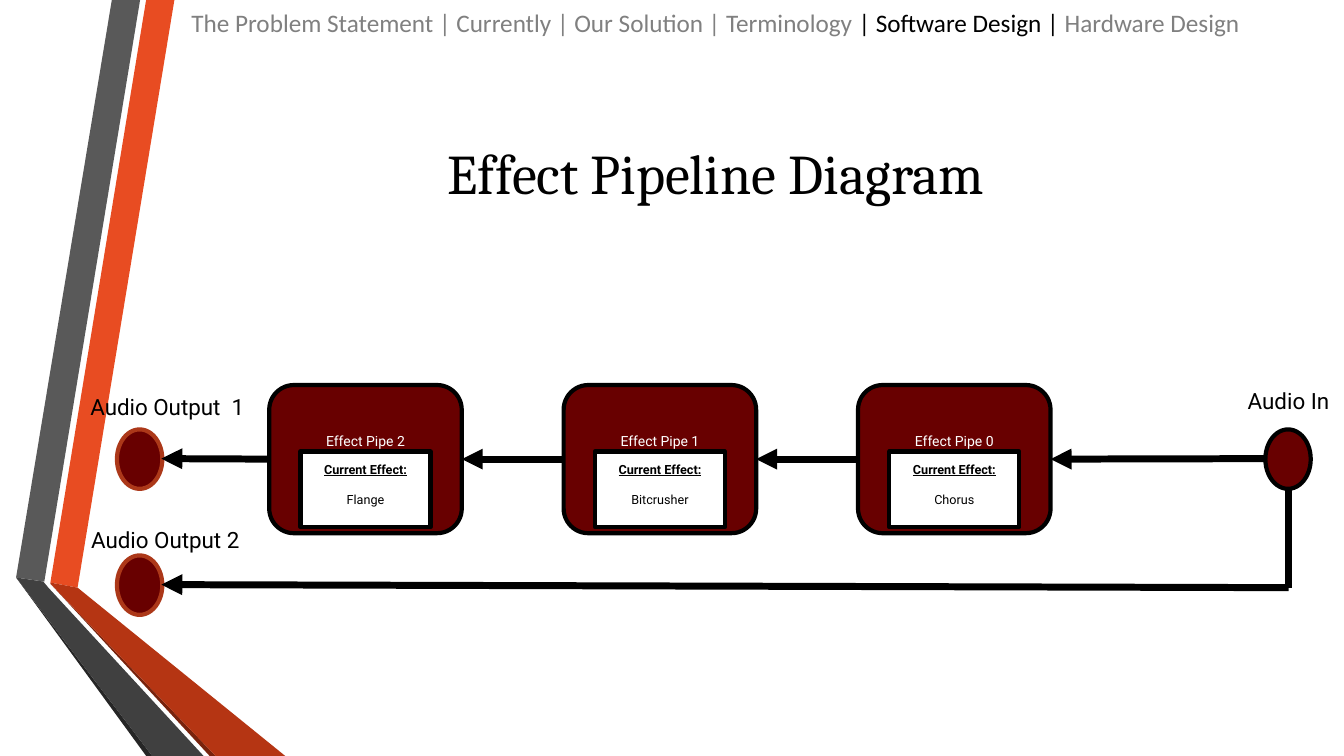
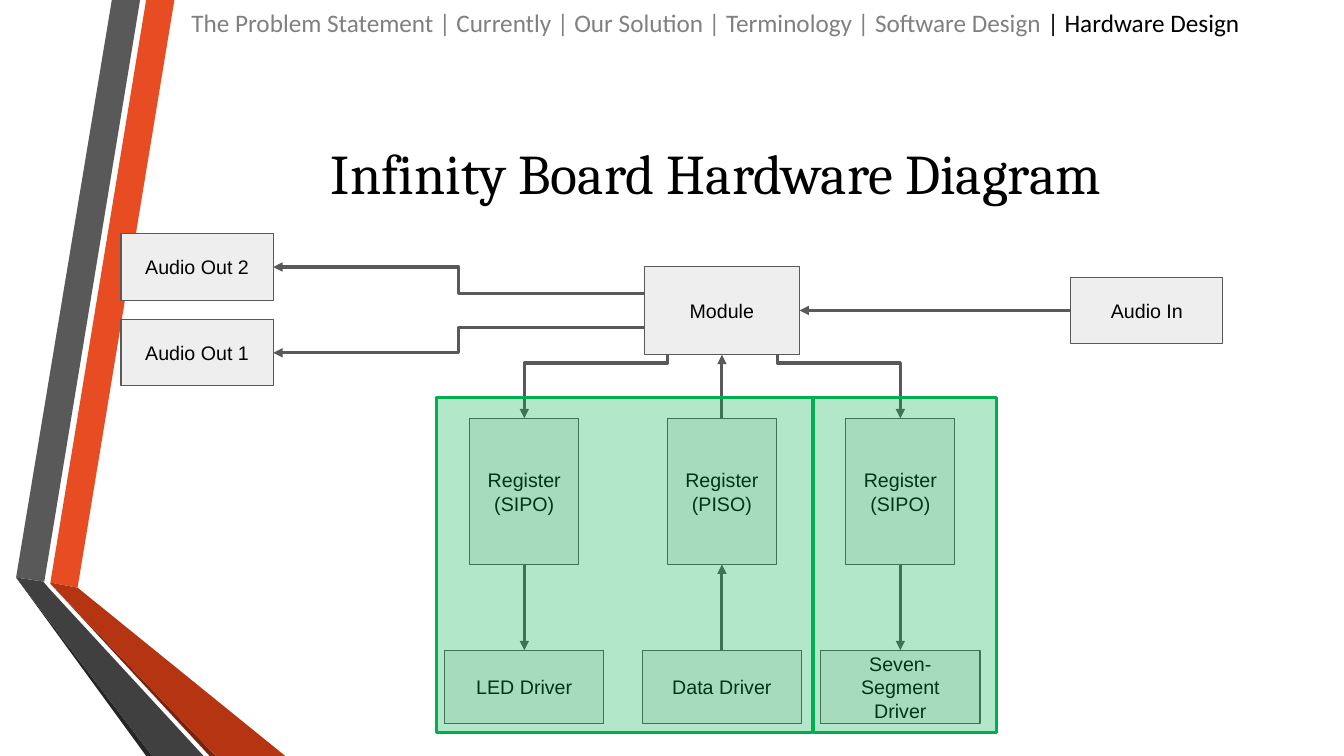
"""Two diagram slides: an effect pipeline and the hardware board."""
from dataclasses import dataclass

from lxml import etree
from pptx import Presentation
from pptx import util as u
from pptx.dml.color import RGBColor
from pptx.enum import shapes, text
from pptx.oxml.ns import qn

SHAPE = shapes.MSO_SHAPE
LINK = shapes.MSO_CONNECTOR
ANCHOR = text.MSO_ANCHOR
CENTER = text.PP_ALIGN.CENTER
TOP, LEFT, BOTTOM, RIGHT = range(4)


@dataclass(frozen=True)
class Theme:
    """Colours and text styles shared by the slides."""
    black: str = "000000"
    white: str = "FFFFFF"
    muted: str = "808080"
    maroon: str = "680000"
    rust: str = "AC3819"
    box: str = "EEEEEE"
    wire: str = "595959"
    zone: str = "00B050"
    title: tuple = ("Cambria", 40)
    trail: tuple = ("Calibri", 18)
    label: tuple = ("Roboto", 16)
    pipe: tuple = ("Roboto", 10)
    effect: tuple = ("Roboto", 9)
    block: tuple = ("Arial", 14)


T = Theme()
SECTIONS = ["The Problem Statement", "Currently", "Our Solution", "Terminology",
            "Software Design", "Hardware Design"]
BANDS = [
    ("E84C22", [(0.5, 5.78), (0.77, 5.83), (1.73, 0), (1.45, 0)]),
    ("595959", [(1.39, 0), (1.11, 0), (0.16, 5.73), (0.44, 5.77)]),
    ("262626", [(0.16, 5.73), (1.45, 7.5), (1.51, 7.5)]),
    ("78230D", [(0.5, 5.79), (2.08, 7.5), (2.14, 7.5)]),
    ("B53513", [(0.5, 5.79), (2.14, 7.5), (2.83, 7.5), (0.77, 5.83), (0.5, 5.78)]),
    ("404040", [(2.02, 7.5), (0.48, 5.83), (0.43, 5.77), (0.16, 5.73), (1.51, 7.5)]),
]


def rgb(code):
    """Turn a hex code into a colour."""
    return RGBColor.from_string(code)


def inches(*values):
    """Turn numbers into lengths."""
    return [u.Inches(v) for v in values]


def assign(obj, values):
    """Set each named attribute on an object."""
    for name, value in values.items():
        setattr(obj, name, value)


def add_run(p, words, style, color, **extra):
    """Add a formatted run to a paragraph."""
    r = p.add_run()
    r.text = words
    assign(r.font, {"name": style[0], "size": u.Pt(style[1]), **extra})
    r.font.color.rgb = rgb(color)


def write(tf, lines, style, color, **frame):
    """Fill a text frame with centred lines."""
    assign(tf, {"word_wrap": True, **frame})
    for i, line in enumerate(lines):
        p = tf.add_paragraph() if i else tf.paragraphs[0]
        p.alignment = CENTER
        add_run(p, line, style, color)


def paint(sp, fill, line=None, width=0):
    """Give a shape a flat fill and an outline."""
    sp.shadow.inherit = False
    sp.fill.solid()
    sp.fill.fore_color.rgb = rgb(fill)
    if line:
        sp.line.color.rgb = rgb(line)
        sp.line.width = u.Pt(width)
    else:
        sp.line.fill.background()


def add_shape(s, kind, at, fill, line, width):
    """Add a painted preset shape."""
    sp = s.shapes.add_shape(kind, *inches(*at))
    paint(sp, fill, line, width)
    return sp


def add_label(s, words, at):
    """Add a centred caption."""
    tf = s.shapes.add_textbox(*inches(*at)).text_frame
    write(tf, [words], T.label, T.black)


def add_line(s, start, end, color, width, arrow=True, kind=LINK.STRAIGHT):
    """Add a connector, with an arrowhead at its end by default."""
    c = s.shapes.add_connector(kind, *inches(*start, *end))
    c.line.color.rgb = rgb(color)
    c.line.width = u.Pt(width)
    if arrow:
        etree.SubElement(c.line._get_or_add_ln(), qn("a:tailEnd"), type="triangle")
    etree.SubElement(c.element.spPr, qn("a:effectLst"))
    return c


def add_wire(s, start, start_side, end, end_side):
    """Join the sides of two blocks with a straight arrow."""
    c = add_line(s, (0, 0), (1, 1), T.wire, 2.25)
    c.begin_connect(start, start_side)
    c.end_connect(end, end_side)


def add_drop(s, start, end, bend):
    """Add an elbow arrow that leaves downwards and turns at a share of its height."""
    (x1, y1), (x2, y2) = start, end
    cx, cy = (x1 + x2) / 2, (y1 + y2) / 2
    dx, dy = (x2 - x1) / 2, (y2 - y1) / 2
    c = add_line(s, (cx - dy, cy + dx), (cx + dy, cy - dx), T.wire, 2.25, kind=LINK.ELBOW)
    spPr = c.element.spPr
    spPr.find(qn("a:xfrm")).set("rot", str(90 * 60000))
    geom = spPr.find(qn("a:prstGeom"))
    guides = geom.find(qn("a:avLst"))
    if guides is None:
        guides = etree.SubElement(geom, qn("a:avLst"))
    etree.SubElement(guides, qn("a:gd"), name="adj1", fmla=f"val {round(bend * 100000)}")


def add_bands(prs, s):
    """Draw the side bands and hand them to the slide master."""
    for i, (color, points) in enumerate(BANDS):
        first, *rest = [inches(*point) for point in points]
        builder = s.shapes.build_freeform(*first)
        builder.add_line_segments(rest, close=True)
        sp = builder.convert_to_shape()
        paint(sp, color)
        sp.element.nvSpPr.cNvPr.set("id", str(20 + i))
        prs.slide_master.shapes.element.insert(2 + i, sp.element)


def add_slide(prs, title, current):
    """Add a slide with its title and the section trail."""
    s = prs.slides.add_slide(prs.slide_layouts[5])
    sp = s.shapes.title
    assign(sp, dict(zip(("left", "top", "width", "height"), inches(1.62, 0.75, 10.96, 1.92))))
    write(sp.text_frame, [title], T.title, T.black, vertical_anchor=ANCHOR.MIDDLE,
          auto_size=text.MSO_AUTO_SIZE.NONE)
    tf = s.shapes.add_textbox(*inches(1.8, 0.02, 11.81, 0.4)).text_frame
    tf.word_wrap = True
    p = tf.paragraphs[0]
    i = SECTIONS.index(current)
    after = " | ".join(SECTIONS[i + 1:])
    add_run(p, " | ".join(SECTIONS[:i]) + " ", T.trail, T.muted)
    add_run(p, f"| {current}" + (" | " if after else ""), T.trail, T.black)
    if after:
        add_run(p, after, T.trail, T.muted)
    return s


def add_pipe(s, left, name, effect):
    """Add an effect pipe holding its current effect."""
    pipe = add_shape(s, SHAPE.ROUNDED_RECTANGLE, (left, 3.82, 1.91, 1.47), T.maroon, T.black, 3)
    write(pipe.text_frame, [name], T.pipe, T.white, vertical_anchor=ANCHOR.TOP,
          margin_top=u.Inches(0.4))
    card = add_shape(s, SHAPE.RECTANGLE, (left + 0.31, 4.48, 1.29, 0.75), T.white, T.black, 3)
    tf = card.text_frame
    write(tf, ["Current Effect:", effect], T.effect, T.black, vertical_anchor=ANCHOR.TOP,
          margin_top=u.Inches(0.1))
    assign(tf.paragraphs[0].runs[0].font, {"bold": True, "underline": True})
    tf.paragraphs[1].space_before = u.Pt(10.5)
    return pipe


def add_block(s, at, *lines):
    """Add a hardware block."""
    sp = add_shape(s, SHAPE.RECTANGLE, at, T.box, T.wire, 0.75)
    sides = ("left", "top", "right", "bottom")
    write(sp.text_frame, lines, T.block, T.black, vertical_anchor=ANCHOR.MIDDLE,
          **{f"margin_{side}": u.Inches(0.1) for side in sides})
    return sp


def add_zone(s, left, width):
    """Add a translucent zone over a group of blocks."""
    sp = add_shape(s, SHAPE.RECTANGLE, (left, 3.94, width, 3.33), T.zone, T.zone, 2)
    color = sp.element.spPr.find(qn("a:solidFill")).find(qn("a:srgbClr"))
    etree.SubElement(color, qn("a:alpha"), val="30000")


def draw_pipeline(s):
    """Draw the audio nodes, the pipes and the signal path."""
    for left, top, line in ((1.16, 4.26, T.rust), (1.16, 5.51, T.rust), (12.55, 4.26, T.black)):
        add_shape(s, SHAPE.FLOWCHART_CONNECTOR, (left, top, 0.45, 0.59), T.maroon, line, 3)
    add_label(s, "Audio Output  1", (0.71, 3.85, 1.9, 0.37))
    add_label(s, "Audio Output 2", (0.66, 5.17, 1.96, 0.37))
    add_label(s, "Audio In", (12.01, 3.79, 1.54, 0.37))
    pipes = [add_pipe(s, 2.67 + 2.92 * i, f"Effect Pipe {2 - i}", effect)
             for i, effect in enumerate(("Flange", "Bitcrusher", "Chorus"))]
    for source, target in zip(pipes + [None], [None] + pipes):
        c = add_line(s, (12.55, 4.55), (1.6, 4.55), T.black, 5)
        if source:
            c.begin_connect(source, LEFT)
        if target:
            c.end_connect(target, RIGHT)
    add_line(s, (12.78, 4.85), (12.78, 5.83), T.black, 5, arrow=False)
    add_line(s, (12.78, 5.83), (1.6, 5.8), T.black, 5)


def draw_hardware(s):
    """Draw the controller, its audio ports and the register columns."""
    audio_in = add_block(s, (10.62, 2.75, 1.51, 0.66), "Audio In")
    add_block(s, (1.2, 3.17, 1.51, 0.66), "Audio Out 1")
    add_block(s, (1.2, 2.32, 1.51, 0.66), "Audio Out 2")
    module = add_block(s, (6.39, 2.64, 1.54, 0.88), "Module")
    columns = ((5.2, "(SIPO)", ["LED Driver"]), (7.16, "(PISO)", ["Data Driver"]),
               (8.93, "(SIPO)", ["Seven-Segment", "Driver"]))
    for x, kind, driver_lines in columns:
        register = add_block(s, (x - 0.54, 4.15, 1.08, 1.45), "Register", kind)
        driver = add_block(s, (x - 0.79, 6.45, 1.58, 0.73), *driver_lines)
        if kind == "(PISO)":
            add_wire(s, driver, TOP, register, BOTTOM)
            add_wire(s, register, TOP, module, BOTTOM)
        else:
            add_wire(s, register, BOTTOM, driver, TOP)
    for start, end in (((6.39, 2.91), (2.71, 2.65)), ((6.39, 3.25), (2.71, 3.5))):
        add_line(s, start, end, T.wire, 2.25, kind=LINK.ELBOW)
    for start_x, end_x in ((6.62, 5.2), (7.71, 8.93)):
        add_drop(s, (start_x, 3.52), (end_x, 4.15), 0.13)
    add_wire(s, audio_in, LEFT, module, RIGHT)
    add_zone(s, 8.07, 1.81)
    add_zone(s, 4.33, 3.73)


def main():
    """Build and save the slides."""
    prs = Presentation()
    prs.slide_width, prs.slide_height = inches(13.33, 7.5)
    s = add_slide(prs, "Effect Pipeline Diagram", "Software Design")
    add_bands(prs, s)
    draw_pipeline(s)
    draw_hardware(add_slide(prs, "Infinity Board Hardware Diagram", "Hardware Design"))
    prs.save("out.pptx")


if __name__ == "__main__":
    main()
